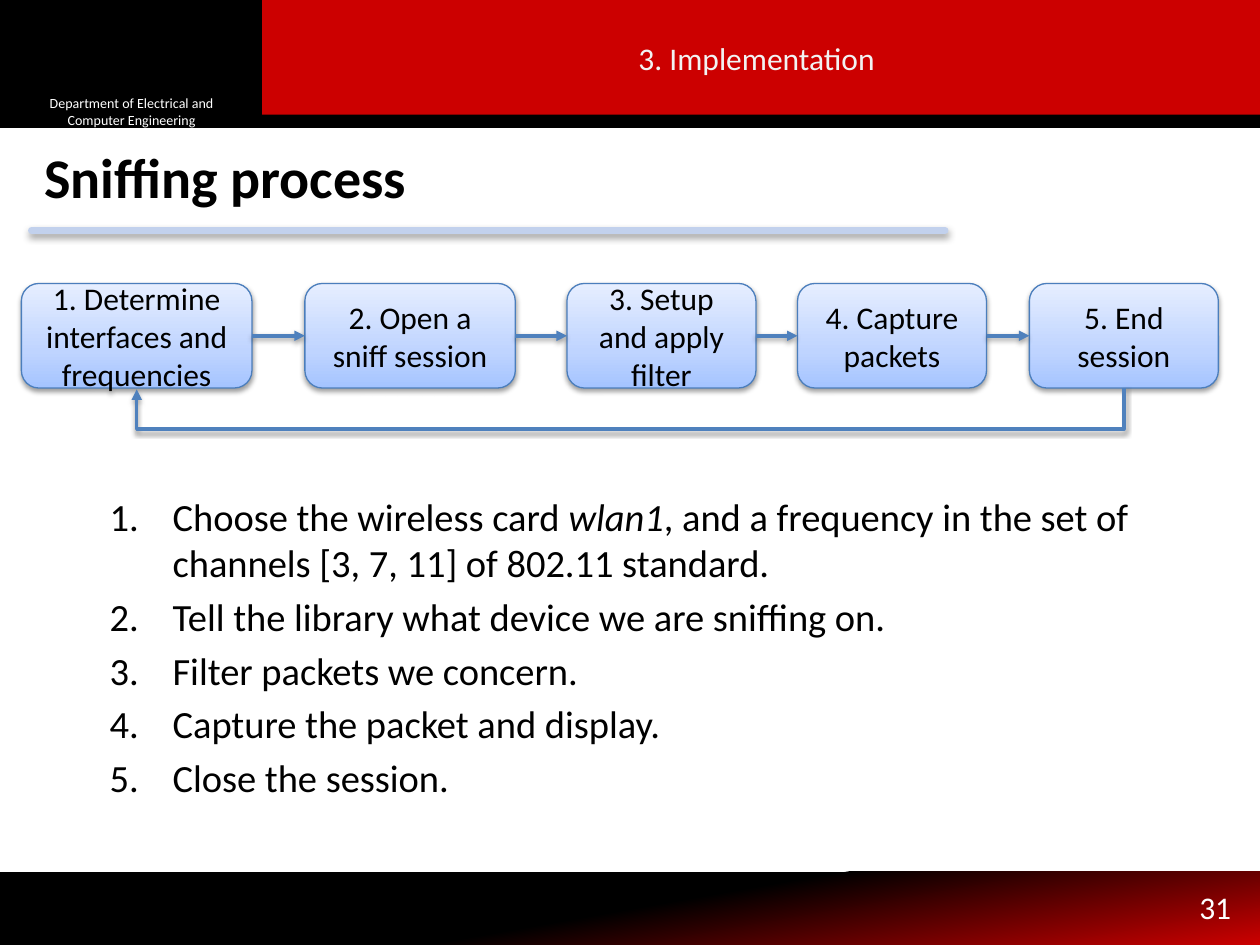
from lxml import etree
from pptx import Presentation
from pptx.dml.color import RGBColor
from pptx.enum import shapes, text
from pptx.oxml.ns import qn
from pptx.util import Inches, Pt

HUES = {"black": "000000", "red": "CC0000", "white": "FFFFFF", "pale": "F2F2F2",
        "rule": "C2D1ED", "edge": "4B7EBC", "arrow": "4F81BD", "blue": "4780C5",
        "deep": "A4C4FF", "mid": "BFD4FF", "light": "E6EEFF"}
SOFT = {"alpha": 38, "blur": 3.1, "dist": 1.6, "angle": 90}
RULE = {"alpha": 40, "blur": 4, "dist": 2, "angle": 85}
STEPS = [  # left, width, label
    (0, 1.83, "1. Determine interfaces and frequencies"),
    (2.25, 1.67, "2. Open a sniff session"),
    (4.33, 1.5, "3. Setup and apply filter"),
    (6.16, 1.5, "4. Capture packets"),
    (8, 1.5, "5. End session"),
]
NOTES = [  # runs of text and whether they are italic
    [("Choose the wireless card ", False), ("wlan1", True),
     (", and a frequency in the set of channels [3, 7, 11] of 802.11 standard.", False)],
    [("Tell the library what device we are sniffing on.", False)],
    [("Filter packets we concern.", False)],
    [("Capture the packet and display.", False)],
    [("Close the session.", False)],
]


def tint(name):
    return RGBColor.from_string(HUES[name])


def put(parent, tag, **attrs):
    return etree.SubElement(parent, qn(tag), {k: str(v) for k, v in attrs.items()})


def style(item, form):
    for key, value in form.items():
        setattr(item, key, value)


def type_face(font, size, hue, **more):
    style(font, {"name": "Calibri", "size": Pt(size), **more})
    font.color.rgb = tint(hue)


def move(shape, x, y, w, h):
    style(shape, dict(zip(("left", "top", "width", "height"), map(Inches, (x, y, w, h)))))


def shade(shape, alpha, blur, dist, angle):
    """Give the shape an outer shadow; call after its line is set."""
    pr = shape.element.spPr
    for old in pr.findall(qn("a:effectLst")):
        pr.remove(old)
    outer = put(put(pr, "a:effectLst"), "a:outerShdw", blurRad=Pt(blur), dist=Pt(dist),
                dir=angle * 60000, rotWithShape=0)
    put(put(outer, "a:srgbClr", val=HUES["black"]), "a:alpha", val=alpha * 1000)


def blend(shape, stops, angle):
    """Fill with a linear gradient of (percent, hue) stops."""
    shape.fill.gradient()
    grad = shape.element.spPr.find(qn("a:gradFill"))
    for child in list(grad):
        grad.remove(child)
    group = put(grad, "a:gsLst")
    for spot, hue in stops:
        put(put(group, "a:gs", pos=spot * 1000), "a:srgbClr", val=HUES[hue])
    put(grad, "a:lin", ang=angle * 60000, scaled=0)


def block(slide, x, y, w, h, hue=None, kind=shapes.MSO_SHAPE.RECTANGLE):
    shape = slide.shapes.add_shape(kind, *map(Inches, (x, y, w, h)))
    shape.shadow.inherit = False
    shape.line.fill.background()
    if hue:
        shape.fill.solid()
        shape.fill.fore_color.rgb = tint(hue)
    return shape


def label(shape, words, size, hue):
    frame = shape.text_frame
    style(frame, {"word_wrap": True, "vertical_anchor": text.MSO_ANCHOR.MIDDLE})
    para = frame.paragraphs[0]
    para.text = words
    para.alignment = text.PP_ALIGN.CENTER
    type_face(para.font, size, hue)


def link(slide, x1, y1, x2, y2, hue, width, shadow, arrow=True):
    line = slide.shapes.add_connector(shapes.MSO_CONNECTOR.STRAIGHT,
                                      *map(Inches, (x1, y1, x2, y2)))
    line.line.color.rgb = tint(hue)
    line.line.width = Pt(width)
    if arrow:
        put(line.element.spPr.find(qn("a:ln")), "a:tailEnd", type="triangle")
    shade(line, **shadow)
    return line


def banner(slide, x, y, w, h):
    """Header bands with the department and the section name."""
    band = block(slide, x, y, w, h, "black")
    band.line.color.rgb = tint("black")
    band.line.width = Pt(2)
    block(slide, x + 2.08, y - 0.01, w - 2.08, h - 0.08, "red")
    dept = block(slide, x + 0.17, y + 0.76, 1.75, 0.25, "black")
    label(dept, "Department of Electrical and Computer Engineering", 8, "white")

    part = slide.placeholders[2]
    slide.shapes._spTree.append(part.element)
    move(part, x + 2.42, y + 0.17, 7.17, 0.58)
    para = part.text_frame.paragraphs[0]
    props = para._p.get_or_add_pPr()
    style(para, {"space_before": Pt(0)})
    props.set("marL", "0")
    props.set("indent", "0")
    put(props, "a:buNone")
    label(part, "3. Implementation", 18, "pale")


def heading(slide, x, y, w, h):
    title = slide.shapes.title
    move(title, x, y, w, h)
    style(title.text_frame, {"vertical_anchor": text.MSO_ANCHOR.TOP,
                             "auto_size": text.MSO_AUTO_SIZE.NONE})
    para = title.text_frame.paragraphs[0]
    para.text = "Sniffing process"
    para.alignment = text.PP_ALIGN.LEFT
    type_face(para.font, 32, "black", bold=True)
    rule = link(slide, x, y + 0.75, x + 7.25, y + 0.75, "rule", 4, RULE, arrow=False)
    rule.element.spPr.find(qn("a:ln")).set("cap", "rnd")


def flow(slide, x, y, h):
    """Row of steps joined by arrows, with a loop from last to first."""
    boxes = []
    for left, width, words in STEPS:
        box = block(slide, x + left, y, width, h, kind=shapes.MSO_SHAPE.ROUNDED_RECTANGLE)
        blend(box, [(0, "deep"), (35, "mid"), (100, "light")], 270)
        box.line.color.rgb = tint("edge")
        box.line.width = Pt(0.75)
        shade(box, **SOFT)
        label(box, words, 18, "black")
        boxes.append(box)
    for one, two in zip(boxes, boxes[1:]):
        arrow = link(slide, 0, 0, 1, 0, "arrow", 2, SOFT)
        arrow.begin_connect(one, 3)
        arrow.end_connect(two, 1)

    start = x + STEPS[-1][0] + STEPS[-1][1] / 2
    end = x + STEPS[0][1] / 2
    span, thin, drop = start - end, 0.01, 0.33
    loop = link(slide, 0, 0, 1, 1, "arrow", 2, SOFT)
    move(loop, (start + end - thin) / 2, y + h + (thin - span) / 2, thin, span)
    props = loop.element.spPr
    props.find(qn("a:xfrm")).set("rot", str(90 * 60000))
    geom = props.find(qn("a:prstGeom"))
    geom.set("prst", "bentConnector3")
    for old in list(geom):
        geom.remove(old)
    put(put(geom, "a:avLst"), "a:gd", name="adj1", fmla=f"val {round(drop / thin * 100000)}")


def points(slide, x, y, w, h):
    body = slide.placeholders[1]
    move(body, x, y, w, h)
    frame = body.text_frame
    frame.auto_size = text.MSO_AUTO_SIZE.NONE
    for i, runs in enumerate(NOTES):
        para = frame.add_paragraph() if i else frame.paragraphs[0]
        props = para._p.get_or_add_pPr()
        props.set("marL", str(Inches(0.94)))
        props.set("indent", str(Inches(-0.5)))
        if not i:
            para.space_before = Pt(0)
        put(props, "a:buFont", typeface="+mj-lt")
        put(props, "a:buAutoNum", type="arabicPeriod")
        type_face(para.font, 22, "black")
        for words, slant in runs:
            run = para.add_run()
            run.text = words
            type_face(run.font, 22, "black", italic=slant)


def footer(slide, x, y, w, h):
    band = block(slide, x, y, w, h)
    blend(band, [(50, "black"), (100, "red"), (100, "blue")], 80)
    page = slide.shapes.add_textbox(*map(Inches, (x + 9.42, y + 0.08, 0.46, 0.4)))
    page.text_frame.word_wrap = False
    para = page.text_frame.paragraphs[0]
    para.text = "31"
    type_face(para.font, 18, "white")


def main():
    deck = Presentation()
    deck.slide_width, deck.slide_height = Inches(10), Inches(7.5)
    slide = deck.slides.add_slide(deck.slide_layouts[3])
    footer(slide, 0, 6.92, 10, 0.58)
    banner(slide, 0, 0, 10, 1)
    heading(slide, 0.25, 1.08, 7.58, 0.83)
    points(slide, 0.33, 3.86, 9, 3)
    flow(slide, 0.17, 2.25, 0.83)
    deck.save("out.pptx")


if __name__ == "__main__":
    main()
